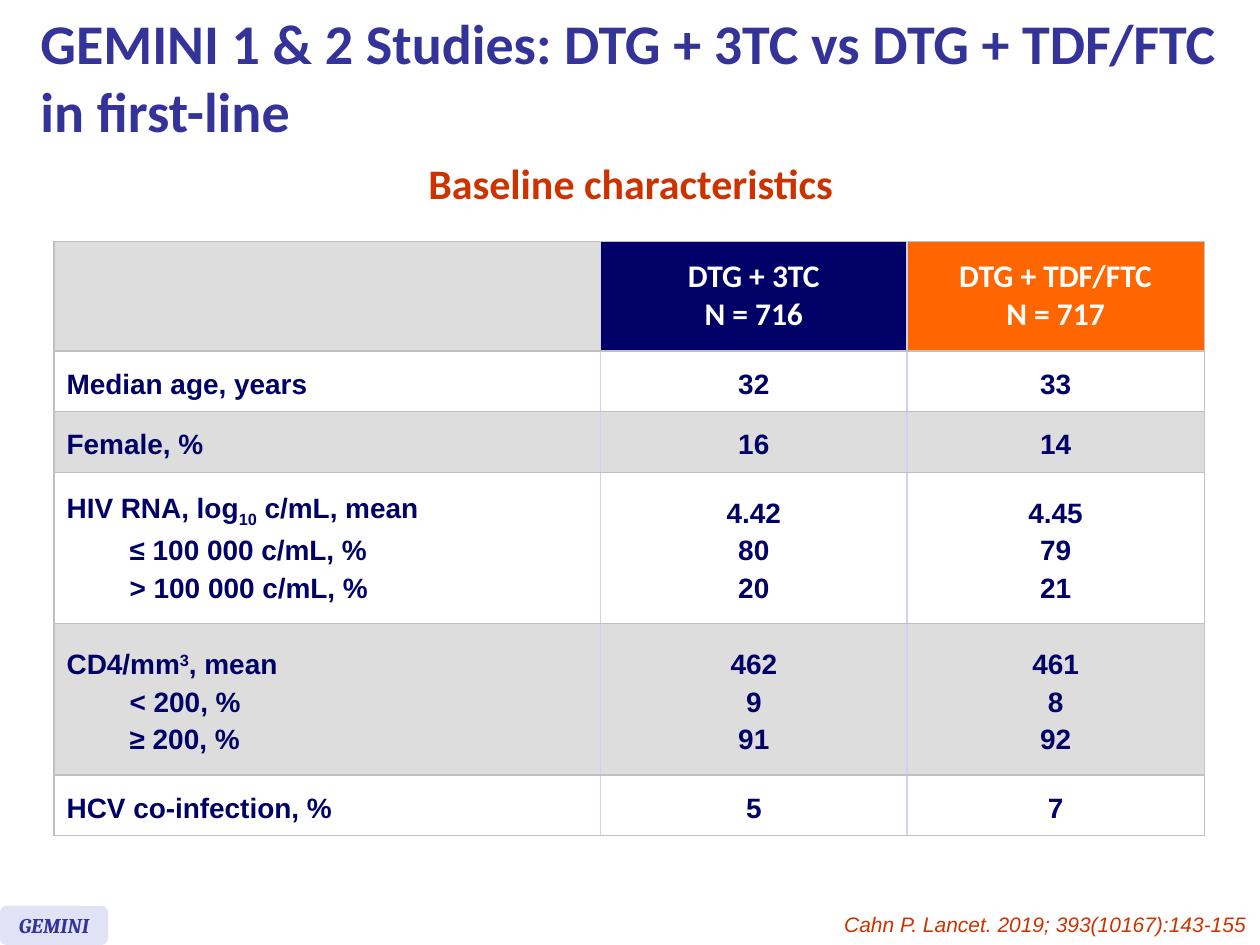
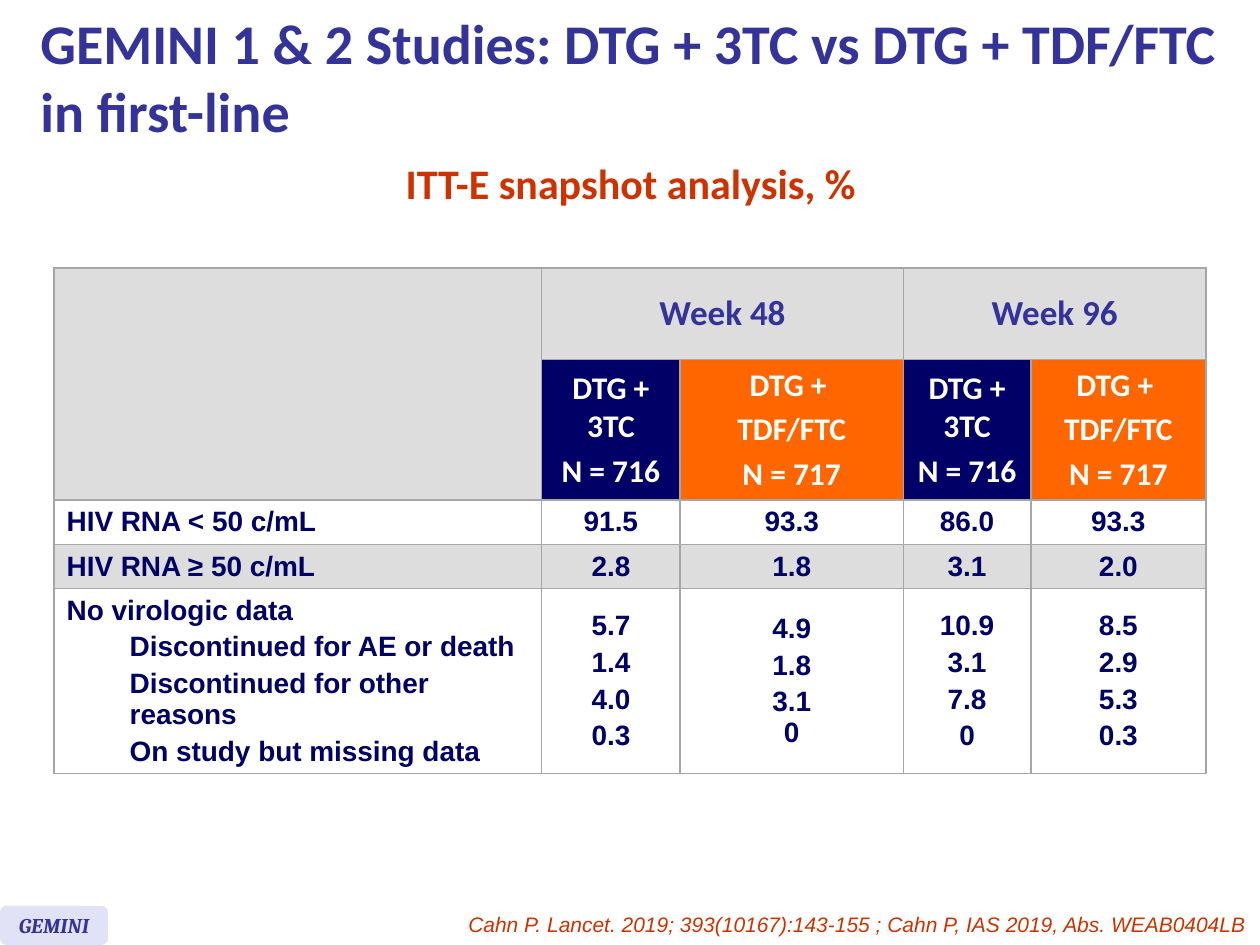
"""Build two slides of results tables for the GEMINI studies."""
from lxml import etree
from pptx import Presentation
from pptx.dml.color import RGBColor
from pptx.enum import shapes, text
from pptx.oxml.ns import qn
from pptx.util import Cm, Pt

NAVY = RGBColor(0x00, 0x00, 0x66)
ORANGE = RGBColor(0xFF, 0x66, 0x00)
INDIGO = RGBColor(0x33, 0x33, 0x99)
RED = RGBColor(0xCC, 0x33, 0x00)
LILAC = RGBColor(0xE2, 0xE2, 0xF6)
PALE = RGBColor(0xD0, 0xD0, 0xF0)
GREY = RGBColor(0xDD, 0xDD, 0xDD)
SILVER = RGBColor(0xC0, 0xC0, 0xC0)
STEEL = RGBColor(0xA6, 0xA6, 0xA6)
WHITE = RGBColor(0xFF, 0xFF, 0xFF)

TITLE = "GEMINI 1 & 2 Studies: DTG + 3TC vs DTG + TDF/FTC in first-line"
STUDY = "GEMINI"
PAPER = "Cahn P. Lancet. 2019; 393(10167):143-155"
LEFT = 1.09
ARMS = [["DTG + 3TC", "N = 716"], ["DTG + ", "TDF/FTC", "N = 717"]]

# Each cell is a list of lines; a line with raised or lowered text is a tuple.
SLIDES = [
    {
        "name": "Baseline characteristics",
        "source": PAPER,
        "top": 4.87,
        "cols": [11.02, 6.17, 6],
        "tall": [2.21, 1.22, 1.22, 3.05, 3.05, 1.22],
        "heads": 1,
        "merge": [],
        "line": Pt(21.6),
        "gap": 0,
        "edge": SILVER,
        "inner": PALE,
        "rows": [
            [[], ["DTG + 3TC", "N = 716"], ["DTG + TDF/FTC", "N = 717"]],
            [["Median age, years"], ["32"], ["33"]],
            [["Female, %"], ["16"], ["14"]],
            [[("HIV RNA, log", ("10", -25), " c/mL, mean"),
              "≤ 100 000 c/mL, %", "> 100 000 c/mL, %"],
             ["4.42", "80\v20"], ["4.45", "79\v21"]],
            [[("CD4/mm", ("3", 30), ", mean"), "< 200, %", "≥ 200, %"],
             ["462", "9\v91"], ["461", "8\v92"]],
            [["HCV co-infection, %"], ["5"], ["7"]],
        ],
    },
    {
        "name": "ITT-E snapshot analysis, %",
        "source": PAPER + " ; Cahn P, IAS 2019, Abs. WEAB0404LB",
        "top": 5.4,
        "cols": [9.83, 2.79, 4.5, 2.57, 3.53],
        "tall": [1.85, 2.24, 0.89, 0.89, 3.43],
        "heads": 2,
        "merge": [(0, 0, 1, 0), (0, 1, 0, 2), (0, 3, 0, 4)],
        "line": 1.0,
        "gap": 0.2,
        "edge": STEEL,
        "inner": STEEL,
        "rows": [
            [[], ["Week 48"], [], ["Week 96"], []],
            [[], *ARMS, *ARMS],
            [["HIV RNA < 50 c/mL"], ["91.5"], ["93.3"], ["86.0"], ["93.3"]],
            [["HIV RNA ≥ 50 c/mL"], ["2.8"], ["1.8"], ["3.1"], ["2.0"]],
            [["No virologic data", "Discontinued for AE or death",
              "Discontinued for other reasons", "On study but missing data"],
             ["5.7", "1.4", "4.0", "0.3"], ["4.9", "1.8", "3.1\v0"],
             ["10.9", "3.1", "7.8", "0"], ["8.5", "2.9", "5.3", "0.3"]],
        ],
    },
]


def style(para, face, size, tint, bold=False, slant=False, align="LEFT"):
    """Set the font and alignment of a paragraph."""
    para.alignment = getattr(text.PP_ALIGN, align)
    font = para.font
    font.name, font.size, font.color.rgb = face, Pt(size), tint
    font.bold, font.italic = bold, slant


def add_text(slide, words, box):
    """Add a wrapping text box and return its paragraph."""
    frame = slide.shapes.add_textbox(*map(Cm, box)).text_frame
    frame.word_wrap = True
    frame.text = words
    return frame.paragraphs[0]


def add_runs(para, parts):
    """Write parts as runs; a pair holds text and its baseline shift in percent."""
    for part in parts:
        words, shift = (part, 0) if isinstance(part, str) else part
        run = para.add_run()
        run.text = words
        if shift:
            run.font._element.set("baseline", str(shift * 1000))


def set_edges(cell, tints):
    """Draw the left, right, top and bottom borders of a cell."""
    props = cell._tc.get_or_add_tcPr()
    for at, (side, tint) in enumerate(zip("LRTB", tints)):
        line = etree.Element(qn(f"a:ln{side}"), w=str(Pt(1)))
        fill = etree.SubElement(line, qn("a:solidFill"))
        etree.SubElement(fill, qn("a:srgbClr"), val=str(tint))
        props.insert(at, line)


def fill_cell(cell, lines, look, data, label):
    """Write the lines of one cell; later lines of a label are indented."""
    face, size, tint = look
    frame = cell.text_frame
    cell.vertical_anchor = text.MSO_ANCHOR.MIDDLE
    for n, words in enumerate(lines):
        para = frame.add_paragraph() if n else frame.paragraphs[0]
        if isinstance(words, tuple):
            add_runs(para, words)
        else:
            para.text = words
        para.line_spacing = data["line"]
        if n:
            para.space_before = Pt(round(size * data["gap"], 1))
        if n and label:
            para.level = 1
            props = para._p.get_or_add_pPr()
            props.set("marL", str(Cm(1.27)))
            props.set("indent", "0")
        style(para, face, size, tint, True, align="LEFT" if label else "CENTER")


def cell_look(row, col, heads):
    """Return the fill and font of a cell from its place."""
    if row >= heads:
        return (GREY if (row - heads) % 2 else WHITE), ("Arial", 16, NAVY)
    if col and row == heads - 1:
        return (NAVY if col % 2 else ORANGE), ("Calibri", 18, WHITE)
    return GREY, ("Calibri", 20, INDIGO)


def add_grid(slide, data):
    """Add the results table."""
    rows, cols, tall = data["rows"], data["cols"], data["tall"]
    box = LEFT, data["top"], sum(cols), sum(tall)
    grid = slide.shapes.add_table(len(rows), len(cols), *map(Cm, box)).table
    grid.first_row = grid.horz_banding = False
    for col, wide in zip(grid.columns, cols):
        col.width = Cm(wide)
    for row, high in zip(grid.rows, tall):
        row.height = Cm(high)
    edge, inner = data["edge"], data["inner"]
    for r, row in enumerate(rows):
        for c, lines in enumerate(row):
            cell = grid.cell(r, c)
            fill, look = cell_look(r, c, data["heads"])
            cell.fill.solid()
            cell.fill.fore_color.rgb = fill
            fill_cell(cell, lines, look, data, c == 0)
            right = inner if c < len(cols) - 1 else edge
            set_edges(cell, (inner if c else edge, right, edge, edge))
    for r, c, low, far in data["merge"]:
        grid.cell(r, c).merge(grid.cell(low, far))


def add_title(slide):
    """Place and format the title."""
    title = slide.shapes.title
    title.left, title.top, title.width, title.height = map(Cm, (0.56, 0, 24.8, 3.07))
    frame = title.text_frame
    frame.text = TITLE
    frame.auto_size = text.MSO_AUTO_SIZE.NONE
    frame.vertical_anchor = text.MSO_ANCHOR.MIDDLE
    style(frame.paragraphs[0], "Calibri", 32, INDIGO, True)


def add_badge(slide):
    """Add the study badge in the lower left corner."""
    kind = shapes.MSO_SHAPE.ROUNDED_RECTANGLE
    badge = slide.shapes.add_shape(kind, *map(Cm, (0, 18.26, 2.18, 0.79)))
    badge.shadow.inherit = False
    badge.fill.solid()
    badge.fill.fore_color.rgb = LILAC
    badge.line.fill.background()
    frame = badge.text_frame
    frame.text = STUDY
    frame.word_wrap = False
    frame.vertical_anchor = text.MSO_ANCHOR.MIDDLE
    style(frame.paragraphs[0], "Cambria", 12, INDIGO, True, True, "CENTER")


def add_slide(deck, data):
    """Add one slide with its shared parts and table."""
    slide = deck.slides.add_slide(deck.slide_layouts[5])
    add_title(slide)
    add_grid(slide, data)
    name = add_text(slide, data["name"], (2.77, 3.53, 19.89, 0.91))
    name.line_spacing = Pt(15.2)
    style(name, "Calibri", 24, RED, True, align="CENTER")
    add_badge(slide)
    source = add_text(slide, data["source"], (4.27, 18.26, 21.11, 0.76))
    style(source, "Arial", 12, RED, slant=True, align="RIGHT")


def main():
    """Build and save the deck."""
    deck = Presentation()
    deck.slide_width, deck.slide_height = Cm(25.4), Cm(19.05)
    for data in SLIDES:
        add_slide(deck, data)
    deck.save("out.pptx")


if __name__ == "__main__":
    main()
